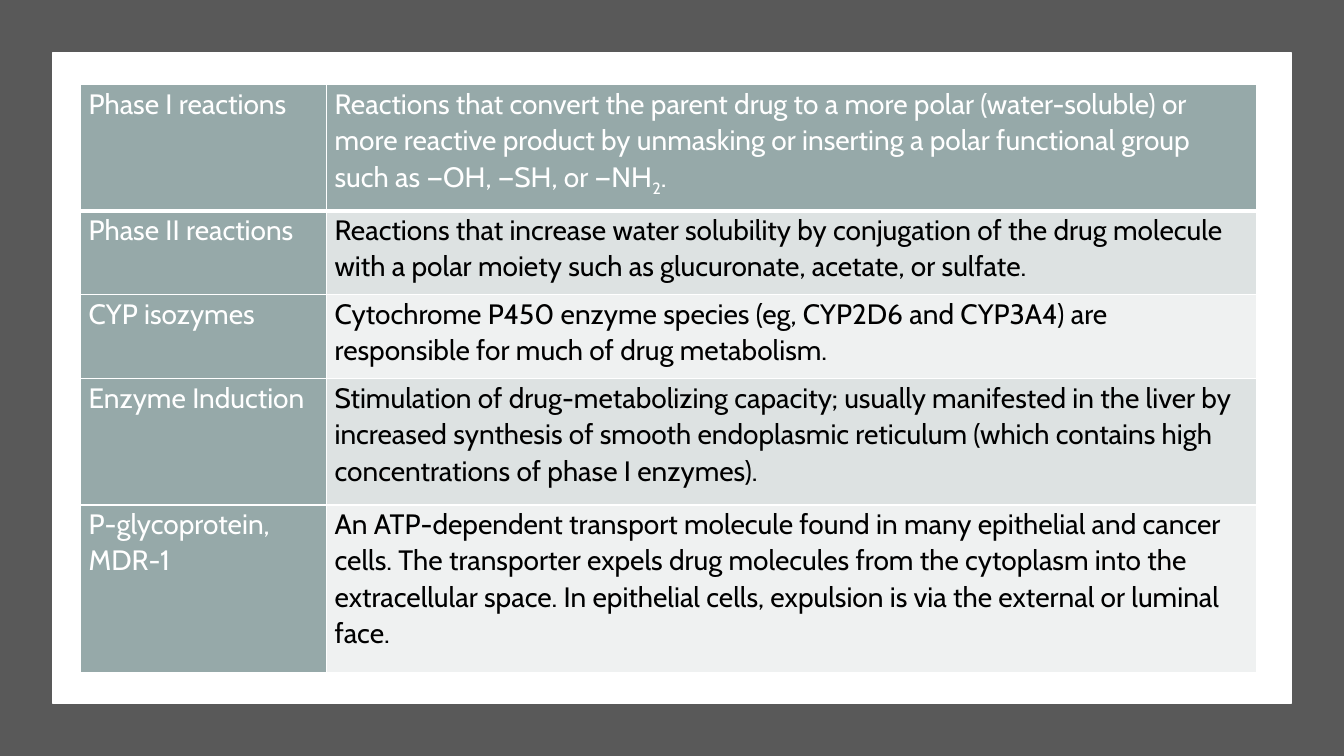
from dataclasses import dataclass

from lxml.etree import SubElement
from pptx import Presentation
from pptx.dml.color import RGBColor
from pptx.enum.shapes import MSO_SHAPE
from pptx.oxml import parse_xml
from pptx.oxml.ns import nsdecls, qn
from pptx.util import Emu, Inches, Pt

WIDTH, HEIGHT = Inches(13.33), Inches(7.5)
FONT = "Cabin"
WHITE, BLACK, GREY = "FFFFFF", "000000", "595959"
TERM_FILL = "96A9A9"
BANDS = ("EFF1F1", "DDE2E2")
TABLE_LEFT, TABLE_TOP = 0.06, 0.112
TERM_SHARE, MEANING_SHARE = 0.183, 0.6917
LINE_SHARE = 0.0556


@dataclass(frozen=True)
class Entry:
    """A term, its meaning and the number of text lines its row holds."""

    term: str
    meaning: str
    lines: int
    subscript: str = ""
    ending: str = ""


ENTRIES = (
    Entry("Phase I reactions",
          "Reactions that convert the parent drug to a more polar (water-soluble) or more "
          "reactive product by unmasking or inserting a polar functional group such as "
          "—OH, —SH, or —NH", 3, "2", "."),
    Entry("Phase II reactions",
          "Reactions that increase water solubility by conjugation of the drug molecule "
          "with a polar moiety such as glucuronate, acetate, or sulfate.", 2),
    Entry("CYP isozymes",
          "Cytochrome P450 enzyme species (eg, CYP2D6 and CYP3A4) are responsible for "
          "much of drug metabolism.", 2),
    Entry("Enzyme Induction",
          "Stimulation of drug-metabolizing capacity; usually manifested in the liver by "
          "increased synthesis of smooth endoplasmic reticulum (which contains high "
          "concentrations of phase I enzymes).", 3),
    Entry("P-glycoprotein, MDR-1",
          "An ATP-dependent transport molecule found in many epithelial and cancer cells. "
          "The transporter expels drug molecules from the cytoplasm into the extracellular "
          "space. In epithelial cells, expulsion is via the external or luminal face.", 4),
)


def colour(value: str) -> RGBColor:
    """Turn a hex string into a colour."""
    return RGBColor.from_string(value)


def across(share: float) -> Emu:
    """Give a share of the slide's width."""
    return Emu(round(WIDTH * share))


def down(share: float) -> Emu:
    """Give a share of the slide's height."""
    return Emu(round(HEIGHT * share))


def add_panel(page, left: float, top: float, width: float, height: float, fill: str) -> None:
    """Draw a plain rectangle placed by shares of the slide."""
    box = page.shapes.add_shape(MSO_SHAPE.RECTANGLE, across(left), down(top),
                                across(width), down(height))
    box.shadow.inherit = False
    box.fill.solid()
    box.fill.fore_color.rgb = colour(fill)
    box.line.color.rgb = colour(fill)
    box.line.width = Pt(1)


def add_text(para, text: str, *, ink: str, size: float = 20, baseline: int = 0) -> None:
    """Add a span of text in the given format."""
    span = para.add_run()
    span.text = text
    span.font.name = FONT
    span.font.size = Pt(size)
    span.font.color.rgb = colour(ink)
    if baseline:
        span.font._element.set("baseline", str(baseline * 1000))


def style_cell(cell, fill: str, bottom: float):
    """Set a cell's fill, margins and borders and return its paragraph."""
    cell.fill.solid()
    cell.fill.fore_color.rgb = colour(fill)
    cell.margin_left = cell.margin_right = Inches(0.08)
    cell.margin_top = cell.margin_bottom = 0
    properties = cell._tc.get_or_add_tcPr()
    for place, (side, points) in enumerate((("L", 1), ("R", 1), ("T", 1), ("B", bottom))):
        edge = parse_xml(f'<a:ln{side} {nsdecls("a")} w="{Pt(points)}"/>')
        solid = SubElement(edge, qn("a:solidFill"))
        SubElement(solid, qn("a:srgbClr"), val=WHITE)
        properties.insert(place, edge)
    para = cell.text_frame.paragraphs[0]
    para.line_spacing = 1.07
    para.space_after = Pt(8)
    return para


def add_glossary(page) -> None:
    """Draw the table of terms and meanings."""
    total = sum(entry.lines for entry in ENTRIES)
    table = page.shapes.add_table(
        len(ENTRIES), 2, across(TABLE_LEFT), down(TABLE_TOP),
        across(TERM_SHARE + MEANING_SHARE), down(total * LINE_SHARE)).table
    table.first_row = table.horz_banding = False
    for column, share in zip(table.columns, (TERM_SHARE, MEANING_SHARE)):
        column.width = across(share)
    for index, entry in enumerate(ENTRIES):
        table.rows[index].height = down(entry.lines * LINE_SHARE)
        heading = index == 0
        bottom = 3 if heading else 1
        add_text(style_cell(table.cell(index, 0), TERM_FILL, bottom), entry.term, ink=WHITE)
        fill, ink = (TERM_FILL, WHITE) if heading else (BANDS[index % 2], BLACK)
        para = style_cell(table.cell(index, 1), fill, bottom)
        add_text(para, entry.meaning, ink=ink)
        if entry.subscript:
            add_text(para, entry.subscript, ink=ink, baseline=-25)
            add_text(para, entry.ending, ink=ink)


def main() -> None:
    """Build the slide and save it."""
    deck = Presentation()
    deck.slide_width, deck.slide_height = WIDTH, HEIGHT
    page = deck.slides.add_slide(deck.slide_layouts[6])
    add_panel(page, 0, 0, 1, 1, GREY)
    add_panel(page, 0.039, 0.07, 0.922, 0.86, WHITE)
    add_glossary(page)
    deck.save("out.pptx")


if __name__ == "__main__":
    main()
